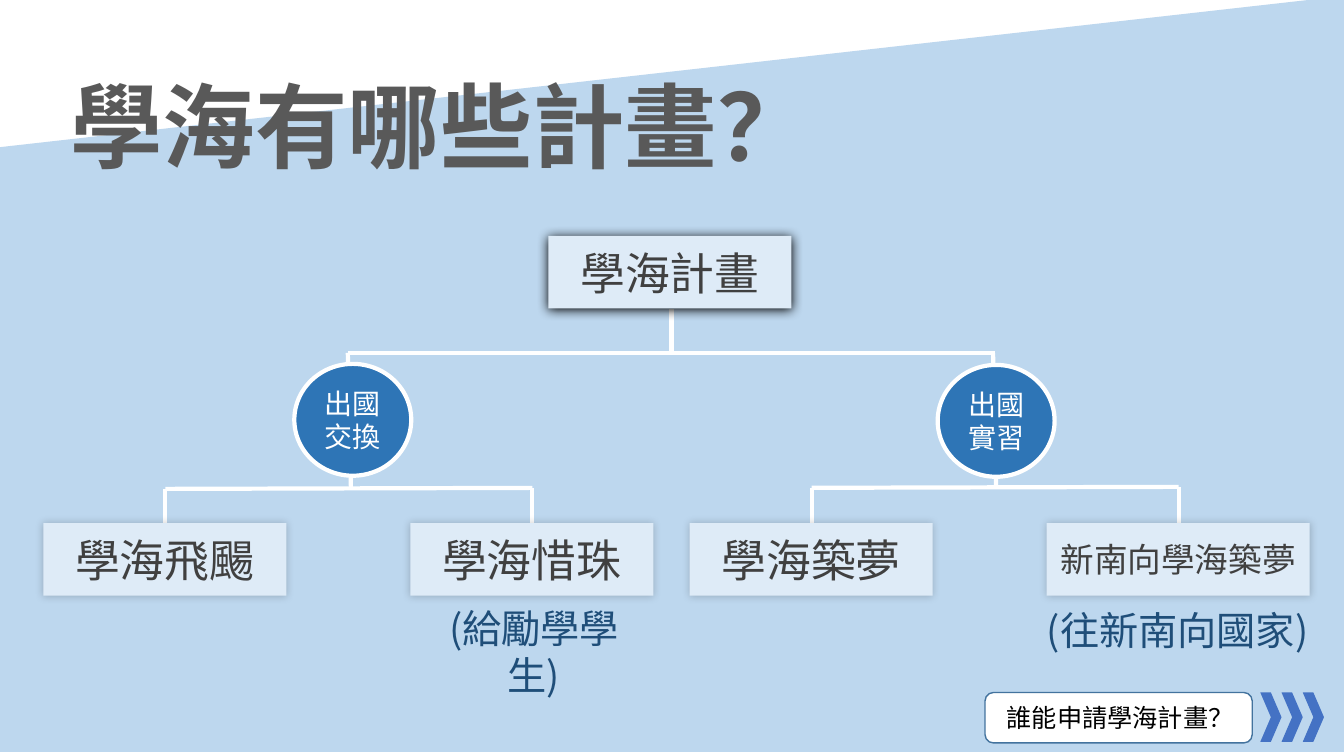
from lxml import etree
from pptx import Presentation
from pptx.dml.color import RGBColor
from pptx.enum.shapes import MSO_CONNECTOR, MSO_SHAPE as SHAPE
from pptx.enum.text import MSO_ANCHOR as ANCHOR, MSO_AUTO_SIZE as AUTO, PP_ALIGN as ALIGN
from pptx.oxml.ns import qn
from pptx.util import Inches, Pt

FONT = "Noto Sans CJK SC"
W, H = Inches(13.33), Inches(7.5)
SOFT_SHADOW = (20, 6, 0, 315)
STRONG_SHADOW = (100, 8.5, 1, 90)


def place(x, y):
    """Turn percentages of the slide's width and height into lengths."""
    return round(W * x / 100), round(H * y / 100)


def rgb(value):
    return RGBColor.from_string(value)


def write(sp, text, size, color, align=ALIGN.CENTER, bold=False):
    p = sp.text_frame.paragraphs[0]
    p.alignment = align
    r = p.add_run()
    r.text = text
    f = p.font
    f.name, f.size, f.bold = FONT, Pt(size), bold
    f.color.rgb = rgb(color)
    # East Asian glyphs take their typeface from a:ea
    r.font.name = FONT
    latin = r._r.rPr.find(qn("a:latin"))
    ea = etree.Element(qn("a:ea"), typeface=FONT)
    latin.addnext(ea)
    r.font.size, r.font.bold = Pt(size), bold
    r.font.color.rgb = rgb(color)


def add_shape(s, kind, x, y, w, h, fill, line=None, weight=1):
    sp = s.shapes.add_shape(kind, *place(x, y), *place(w, h))
    sp.shadow.inherit = False
    sp.fill.solid()
    sp.fill.fore_color.rgb = rgb(fill)
    if line:
        sp.line.color.rgb = rgb(line)
        sp.line.width = Pt(weight)
    else:
        sp.line.fill.background()
    sp.text_frame.word_wrap = True
    sp.text_frame.vertical_anchor = ANCHOR.MIDDLE
    return sp


def add_text(s, x, y, w, h, text, size, color, wrap=True, **style):
    sp = s.shapes.add_textbox(*place(x, y), *place(w, h))
    sp.text_frame.word_wrap = wrap
    sp.text_frame.auto_size = AUTO.SHAPE_TO_FIT_TEXT
    write(sp, text, size, color, **style)


def add_line(s, x1, y1, x2, y2):
    c = s.shapes.add_connector(MSO_CONNECTOR.STRAIGHT, *place(x1, y1), *place(x2, y2))
    c.line.color.rgb = rgb("FFFFFF")
    c.line.width = Pt(3)
    etree.SubElement(c._element.spPr, qn("a:effectLst"))


def add_bracket(s, left, right, y):
    """Slightly rising bar with a drop to a plan at each end."""
    rise, drop = 0.13, 5.73
    add_line(s, left, y, right, y - rise)
    add_line(s, left, y, left, y + drop)
    add_line(s, right, y - rise, right, y - rise + drop)


def add_plan(s, x, y, text, size=32, w=18.08, shadow=SOFT_SHADOW):
    sp = add_shape(s, SHAPE.RECTANGLE, x, y, w, 9.6, "DEEBF7")
    alpha, blur, dist, angle = shadow
    effects = sp._element.spPr.find(qn("a:effectLst"))
    outer = etree.SubElement(effects, qn("a:outerShdw"), blurRad=str(Pt(blur)),
                             dist=str(Pt(dist)), dir=str(angle * 60000),
                             algn="ctr", rotWithShape="0")
    color = etree.SubElement(outer, qn("a:srgbClr"), val="000000")
    etree.SubElement(color, qn("a:alpha"), val=str(alpha * 1000))
    write(sp, text, size, "404040")


def add_branch(s, x, y, text):
    sp = add_shape(s, SHAPE.OVAL, x, y, 8.7, 14.8, "2E75B6", "FFFFFF", 3)
    write(sp, text, 20, "FFFFFF")


def add_next_button(s):
    y = 91.6
    add_shape(s, SHAPE.ROUNDED_RECTANGLE, 73.29, y, 19.88, 6.67, "FFFFFF", "43739E")
    add_text(s, 72.84, 92.27, 21, 5.33, "誰能申請學海計畫？", 18, "000000")
    step = 1.58
    for i in range(3):
        add_shape(s, SHAPE.CHEVRON, 93.77 + i * step, y, step, 6.53, "4472C4")


def main():
    prs = Presentation()
    prs.slide_width, prs.slide_height = W, H
    s = prs.slides.add_slide(prs.slide_layouts[6])

    add_shape(s, SHAPE.FLOWCHART_MANUAL_INPUT, 0, -0.53, 100, 100, "BDD7EE")
    add_text(s, 4.5, 8.53, 57.09, 16.13, "學海有哪些計畫？", 66, "595959",
             wrap=False, align=ALIGN.LEFT, bold=True)

    bar, branch_end = 46.67, 64.53
    add_line(s, 49.96, 40.93, 49.96, bar)
    add_line(s, 25.88, bar, 74.04, bar)
    for x in (25.88, 73.89):
        add_line(s, x, bar, x + 0.23, branch_end)
    add_bracket(s, 12.3, 39.61, 64.67)
    add_bracket(s, 60.39, 87.7, 64.53)

    add_plan(s, 40.81, 31.2, "學海計畫", shadow=STRONG_SHADOW)
    add_branch(s, 21.9, 48.13, "出國交換")
    add_branch(s, 69.77, 48.27, "出國實習")
    plans_top = 69.2
    for x, name in ((3.23, "學海飛颺"), (30.53, "學海惜珠"), (51.31, "學海築夢")):
        add_plan(s, x, plans_top, name)
    add_plan(s, 77.87, plans_top, "新南向學海築夢", size=24, w=19.58)

    add_text(s, 30.76, 79.33, 17.93, 7.6, "(給勵學學生)", 28, "1F4E79")
    add_text(s, 76.29, 79.6, 22.66, 7.6, "(往新南向國家)", 28, "1F4E79")
    add_next_button(s)
    prs.save("out.pptx")


if __name__ == "__main__":
    main()
